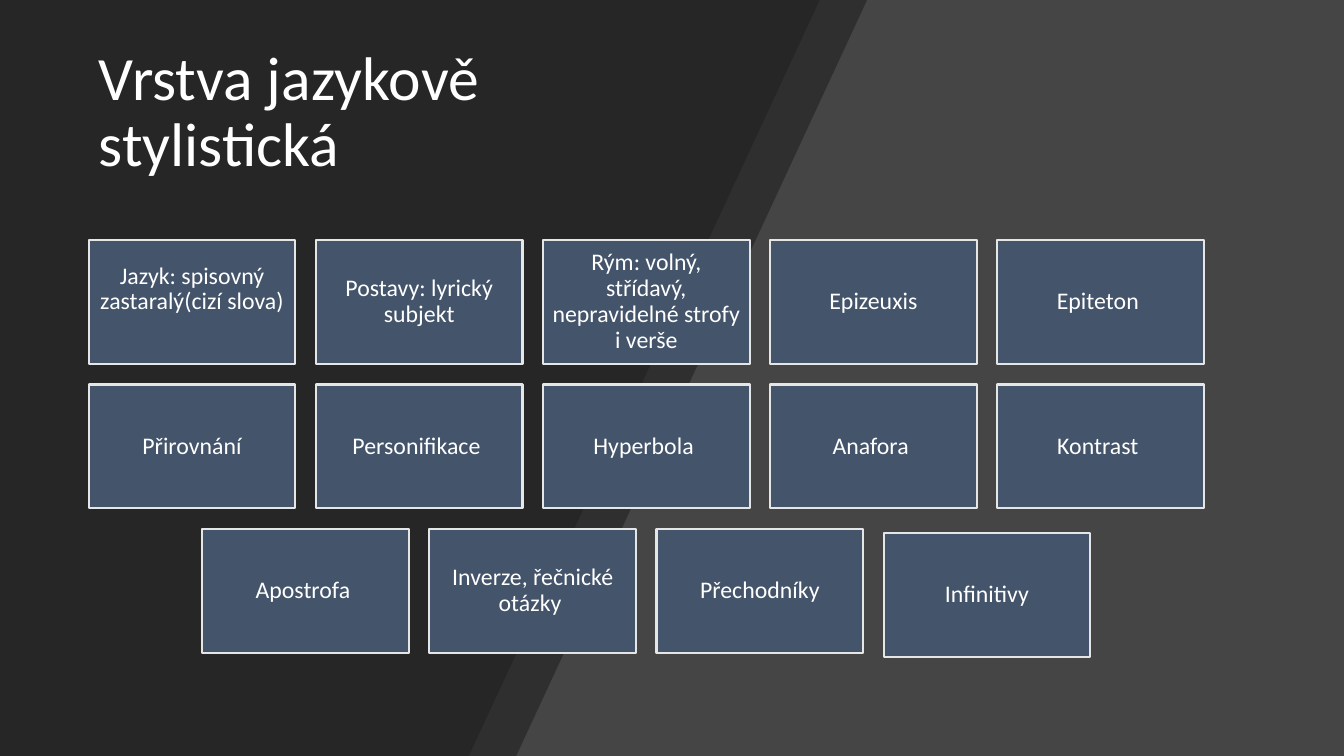
from dataclasses import dataclass

from lxml import etree
from pptx import Presentation
from pptx.dml.color import RGBColor
from pptx.enum.shapes import MSO_SHAPE
from pptx.enum.text import MSO_ANCHOR, PP_ALIGN
from pptx.oxml.ns import qn
from pptx.util import Inches, Pt

RECTANGLE = MSO_SHAPE.RECTANGLE
MIDDLE = MSO_ANCHOR.MIDDLE
CENTER, LEFT = PP_ALIGN.CENTER, PP_ALIGN.LEFT
BLANK_LAYOUT = 6


@dataclass(frozen=True)
class Theme:
    background: str = "454545"
    band: str = "262626"
    card: str = "44546A"
    outline: str = "E7E6E6"
    text: str = "FFFFFF"
    font: str = "Calibri"
    title_size: int = 44
    card_size: int = 17
    outline_width: float = 1.5


@dataclass(frozen=True)
class Box:
    left: float
    top: float
    width: float
    height: float

    def lengths(self):
        return [Inches(v) for v in (self.left, self.top, self.width, self.height)]


THEME = Theme()
PAGE = Box(0, 0, 13.33, 7.5)
TITLE_BOX = Box(0.88, 0.4, 5.76, 1.45)
CARDS_BOX = Box(0.88, 2.38, 11.06, 4.1)
CARD_WIDTH, CARD_HEIGHT = 2.05, 1.23
CARD_INSET = 0.07
LAST_CARD_DROP = 0.04
FIRST_CARD_LIFT = 0.25  # extra bottom inset, one line of text
BAND_SLANT = 3.48

TITLE = "Vrstva jazykově stylistická"
CARD_ROWS = [
    ["Jazyk: spisovný zastaralý(cizí slova)", "Postavy: lyrický subjekt",
     "Rým: volný, střídavý, nepravidelné strofy i verše", "Epizeuxis", "Epiteton "],
    ["Přirovnání", "Personifikace ", "Hyperbola ", "Anafora ", "Kontrast "],
    ["Apostrofa ", "Inverze, řečnické otázky ", "Přechodníky", "Infinitivy"],
]


def color(value):
    return RGBColor.from_string(value)


def write(frame, text, size, alignment):
    frame.word_wrap = True
    frame.vertical_anchor = MIDDLE
    para = frame.paragraphs[0]
    para.text = text
    para.alignment = alignment
    para.line_spacing = 0.9
    font = para.runs[0].font
    font.name, font.size = THEME.font, Pt(size)
    font.color.rgb = color(THEME.text)


def add_band(page, box, opacity=100):
    """Dark area with a slanted right edge."""
    builder = page.shapes.build_freeform(0, 0, scale=Inches(0.01))
    right, bottom = round(box.width * 100), round(box.height * 100)
    slant = round(BAND_SLANT * 100)
    builder.add_line_segments([(right, 0), (right - slant, bottom), (0, bottom)])
    band = builder.convert_to_shape(Inches(box.left), Inches(box.top))
    band.shadow.inherit = False
    band.line.fill.background()
    band.fill.solid()
    band.fill.fore_color.rgb = color(THEME.band)
    if opacity < 100:
        fill_color = band.fill._xPr.find(".//" + qn("a:srgbClr"))
        etree.SubElement(fill_color, qn("a:alpha"), val=str(opacity * 1000))


def add_title(page, box):
    title = page.shapes.add_textbox(*box.lengths())
    write(title.text_frame, TITLE, THEME.title_size, LEFT)


def add_card(page, box, text):
    card = page.shapes.add_shape(RECTANGLE, *box.lengths())
    card.shadow.inherit = False
    card.fill.solid()
    card.fill.fore_color.rgb = color(THEME.card)
    card.line.color.rgb = color(THEME.outline)
    card.line.width = Pt(THEME.outline_width)
    frame = card.text_frame
    frame.margin_left = frame.margin_right = Inches(CARD_INSET)
    frame.margin_top = frame.margin_bottom = Inches(CARD_INSET)
    write(frame, text, THEME.card_size, CENTER)
    return card


def add_cards(page, box):
    """Rows of equal cards, each row centred in the box."""
    columns, rows = len(CARD_ROWS[0]), len(CARD_ROWS)
    step_x = (box.width - CARD_WIDTH) / (columns - 1)
    step_y = (box.height - CARD_HEIGHT) / (rows - 1)
    cards = []
    for row, texts in enumerate(CARD_ROWS):
        left = box.left + (columns - len(texts)) * step_x / 2
        top = box.top + row * step_y
        for column, text in enumerate(texts):
            place = Box(left + column * step_x, top, CARD_WIDTH, CARD_HEIGHT)
            cards.append(add_card(page, place, text))
    cards[0].text_frame.margin_bottom = Inches(CARD_INSET + FIRST_CARD_LIFT)
    cards[-1].top += Inches(LAST_CARD_DROP)


def main():
    deck = Presentation()
    deck.slide_width, deck.slide_height = Inches(PAGE.width), Inches(PAGE.height)
    page = deck.slides.add_slide(deck.slide_layouts[BLANK_LAYOUT])
    page.background.fill.solid()
    page.background.fill.fore_color.rgb = color(THEME.background)

    # Slanted backdrop
    add_band(page, Box(0, 0, 8.6, PAGE.height), opacity=70)
    add_band(page, Box(0, 0, 8.13, PAGE.height))

    # Content
    add_title(page, TITLE_BOX)
    add_cards(page, CARDS_BOX)
    deck.save("out.pptx")


if __name__ == "__main__":
    main()
